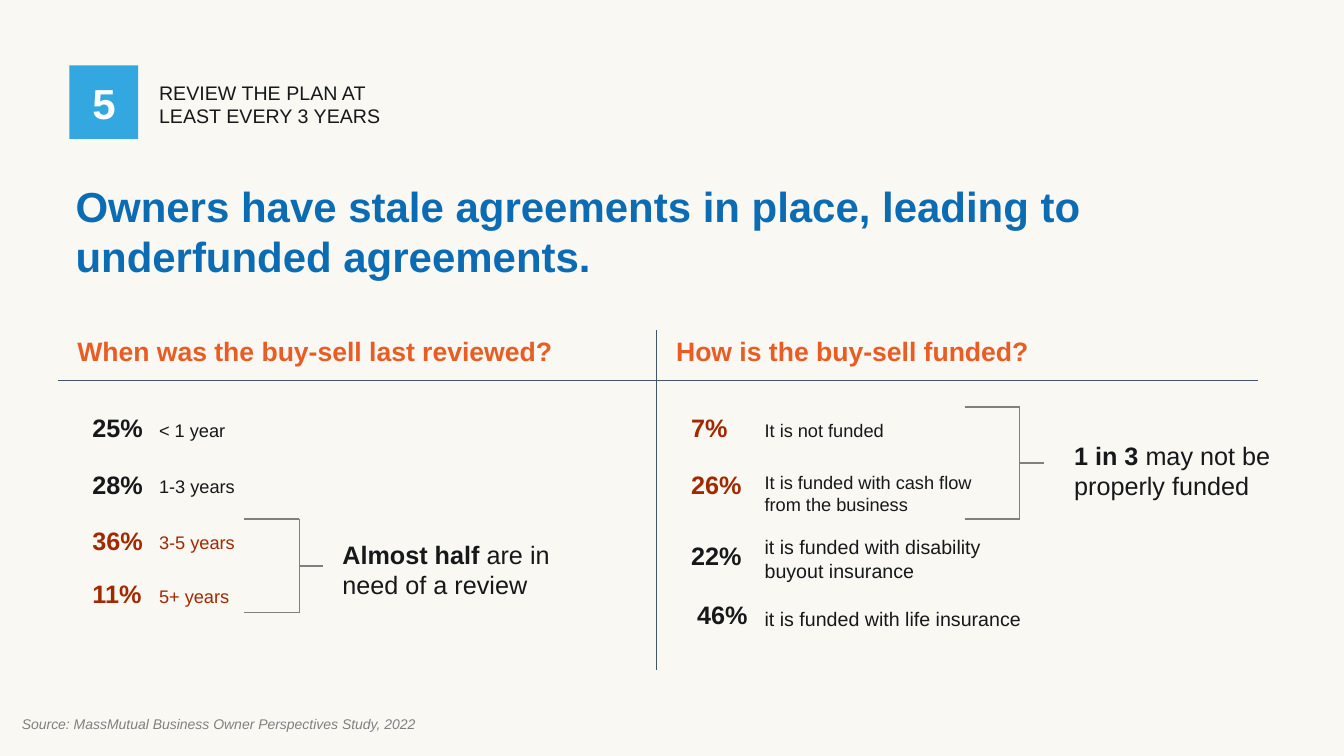
"""Build the slide on reviewing buy-sell agreements."""
from dataclasses import dataclass

from lxml.etree import SubElement
from pptx import Presentation
from pptx.dml.color import RGBColor as Color
from pptx.enum.shapes import MSO_CONNECTOR as Connector, MSO_SHAPE as Shape
from pptx.enum.text import MSO_ANCHOR as Anchor, PP_ALIGN as Align
from pptx.oxml.ns import qn
from pptx.util import Cm, Pt


@dataclass(frozen=True)
class Theme:
    font: str = "Arial"
    background: str = "F9F8F3"
    badge: str = "33A7DF"
    white: str = "FFFFFF"
    text: str = "161819"
    title: str = "0C6CB3"
    heading: str = "E95C24"
    alert: str = "A22800"
    grey: str = "808080"
    divider: str = "44546A"
    title_size: float = 30
    heading_size: float = 19
    figure_size: float = 18
    label_size: float = 14
    small_size: float = 13
    source_size: float = 10


class SlideBuilder:
    def __init__(self, slide, theme):
        self.slide = slide
        self.theme = theme
        fill = slide.background.fill
        fill.solid()
        fill.fore_color.rgb = Color.from_string(theme.background)

    def style(self, paragraph, size, color, bold=None, italic=None):
        paragraph.alignment = Align.LEFT
        font = paragraph.font
        font.name = self.theme.font
        font.size = Pt(size)
        font.bold = bold
        font.italic = italic
        font.color.rgb = Color.from_string(color)

    def title(self, text, left, top, width, height):
        shape = self.slide.shapes.title
        shape.left, shape.top = Cm(left), Cm(top)
        shape.width, shape.height = Cm(width), Cm(height)
        frame = shape.text_frame
        frame.vertical_anchor = Anchor.TOP
        frame.text = text
        self.style(frame.paragraphs[0], self.theme.title_size, self.theme.title, bold=True)

    def text(self, text, left, top, width, height, size, color=None,
             bold=None, italic=None, lead="", wrap=True):
        box = self.slide.shapes.add_textbox(Cm(left), Cm(top), Cm(width), Cm(height))
        frame = box.text_frame
        frame.word_wrap = wrap
        paragraph = frame.paragraphs[0]
        if lead:
            lead_run = paragraph.add_run()
            lead_run.text = lead
            lead_run.font.bold = True
            paragraph.add_run().text = text
        else:
            paragraph.text = text
        self.style(paragraph, size, color or self.theme.text, bold, italic)

    def badge(self, left, top, width, height):
        shape = self.slide.shapes.add_shape(
            Shape.RECTANGLE, Cm(left), Cm(top), Cm(width), Cm(height))
        shape.shadow.inherit = False
        shape.fill.solid()
        shape.fill.fore_color.rgb = Color.from_string(self.theme.badge)
        shape.line.fill.background()

    def line(self, start, end, color, width, shapes=None):
        shapes = shapes or self.slide.shapes
        points = [Cm(value) for value in (*start, *end)]
        connector = shapes.add_connector(Connector.STRAIGHT, *points)
        connector.line.color.rgb = Color.from_string(color)
        connector.line.width = Pt(width)
        SubElement(connector._element.spPr, qn("a:effectLst"))

    def bracket(self, left, top, bottom):
        shapes = self.slide.shapes.add_group_shape().shapes
        spine = left + 1.39
        middle = (top + bottom) / 2
        for start, end in (
            ((left, bottom), (spine, bottom)),
            ((spine, top), (spine, bottom)),
            ((left, top), (spine, top)),
            ((spine, middle), (spine + 0.61, middle)),
        ):
            self.line(start, end, self.theme.grey, 1, shapes)

    def heading(self, text, left):
        self.text(text, left, 8.31, 13.16, 1.07, self.theme.heading_size,
                  self.theme.heading, bold=True)

    def figure(self, text, left, top, color):
        self.text(text, left, top, 3.02, 1.02, self.theme.figure_size, color, bold=True)

    def callout(self, lead, text, left, top, width):
        self.text(text, left, top, width, 1.8, self.theme.figure_size, lead=lead)


def main():
    presentation = Presentation()
    presentation.slide_width, presentation.slide_height = Cm(33.87), Cm(19.05)
    slide = presentation.slides.add_slide(presentation.slide_layouts[5])
    theme = Theme()
    builder = SlideBuilder(slide, theme)
    label, small = theme.label_size, theme.small_size

    builder.badge(1.75, 1.65, 1.73, 1.85)
    builder.text("5", 2.08, 1.83, 1.68, 1.55, theme.title_size, theme.white, bold=True)
    builder.text("REVIEW THE PLAN AT \vLEAST EVERY 3 YEARS", 3.76, 1.91, 10.34, 1.45, label)
    builder.title("Owners have stale agreements in place, leading to underfunded agreements.",
                  1.65, 4.42, 26.49, 2.82)
    builder.text("Source: MassMutual Business Owner Perspectives Study, 2022",
                 0.3, 17.91, 10.54, 0.69, theme.source_size, theme.grey,
                 italic=True, wrap=False)

    builder.heading("When was the buy-sell last reviewed?", 1.7)
    builder.heading("How is the buy-sell funded?", 16.79)
    builder.line((16.54, 8.31), (16.54, 16.89), theme.divider, 0.75)
    builder.line((31.7, 9.58), (1.45, 9.58), theme.divider, 0.75)

    for figure, top, period, period_top, color in (
        ("25%", 10.26, "< 1 year", 10.44, theme.text),
        ("28%", 11.71, "1-3 years", 11.84, theme.text),
        ("36%", 13.11, "3-5 years", 13.26, theme.alert),
        ("11%", 14.45, "5+ years", 14.63, theme.alert),
    ):
        builder.figure(figure, 2.08, top, color)
        builder.text(period, 3.76, period_top, 9.47, 0.81, small, color)

    for figure, left, top, color, funding, funding_top, height, size in (
        ("7%", 17.17, 10.26, theme.alert, "It is not funded", 10.44, 0.81, small),
        ("26%", 17.17, 11.71, theme.alert,
         "It is funded with cash flow\vfrom the business", 11.76, 1.37, small),
        ("22%", 17.17, 13.49, theme.text,
         "it is funded with disability buyout insurance", 13.36, 1.45, label),
        ("46%", 17.32, 14.99, theme.text,
         "it is funded with life insurance", 15.16, 0.86, label),
    ):
        builder.figure(figure, left, top, color)
        builder.text(funding, 19.02, funding_top, 7.49, height, size)

    builder.callout("Almost half ", "are in need of a review", 8.38, 13.46, 6.1)
    builder.callout("1 in 3 ", "may not be properly funded", 26.82, 10.97, 6.58)
    builder.bracket(6.15, 13.08, 15.44)
    builder.bracket(24.31, 10.26, 13.08)

    presentation.save("out.pptx")


if __name__ == "__main__":
    main()
